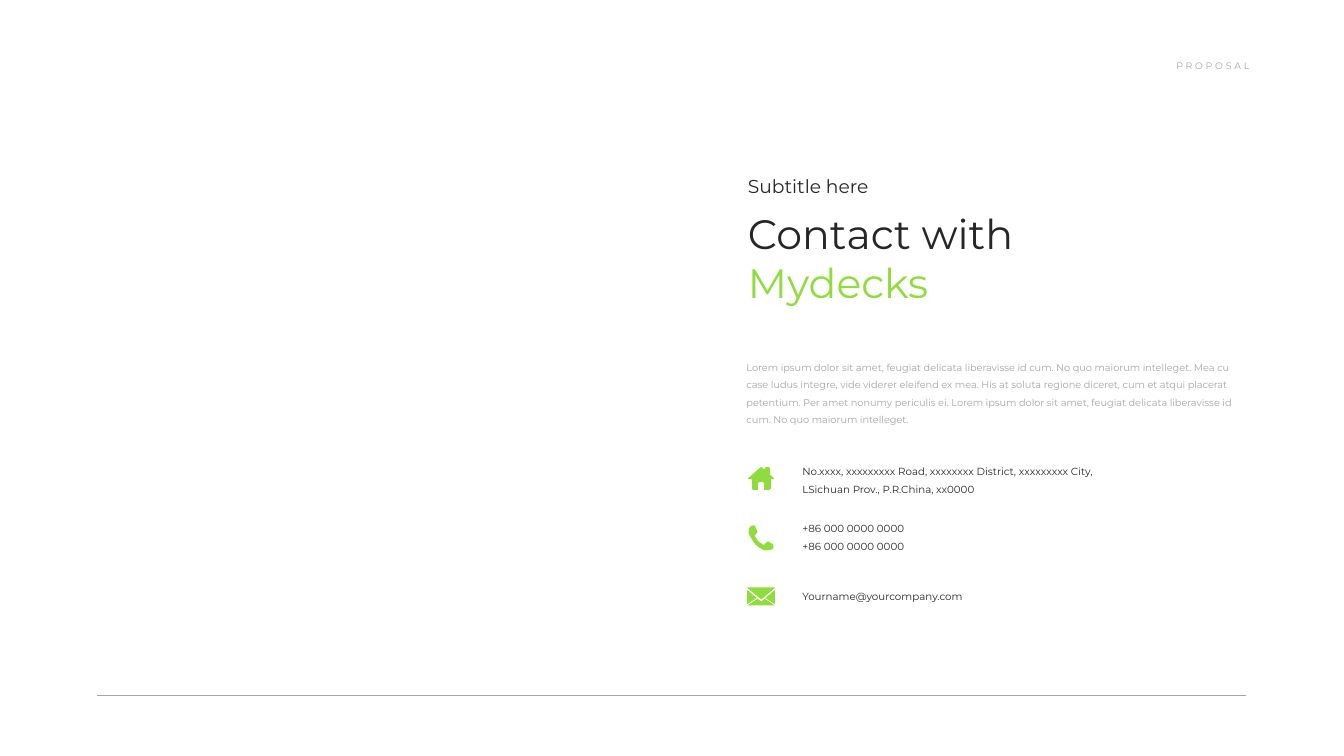
from pptx import Presentation
from pptx.dml.color import RGBColor
from pptx.enum.shapes import MSO_CONNECTOR
from pptx.enum.text import MSO_ANCHOR, MSO_AUTO_SIZE, PP_ALIGN
from pptx.oxml.ns import qn
from pptx.util import Pt
from lxml import etree

STRAIGHT = MSO_CONNECTOR.STRAIGHT
MIDDLE = MSO_ANCHOR.MIDDLE
GROW = MSO_AUTO_SIZE.SHAPE_TO_FIT_TEXT
RIGHT = PP_ALIGN.RIGHT

PX = 9144
WIDTH, HEIGHT = 2000, 1125
COLORS = {"green": "90DC3F", "dark": "262626", "gray": "A6A6A6"}

CONTACT_FRAME = {
    "vertical_anchor": MIDDLE,
    "margin_left": 0,
    "margin_right": 0,
    "margin_top": 15 * PX,
    "margin_bottom": 15 * PX,
}
ONE_AND_HALF = {"line_spacing": 1.5}
SPACED = {"space_before": Pt(12)}

HOUSE = [
    (1140, 695), (1144, 695), (1146, 697), (1146, 706), (1152, 712), (1151, 713),
    (1147, 713), (1147, 727), (1145, 729), (1137, 729), (1137, 719), (1135, 717),
    (1130, 717), (1128, 719), (1128, 729), (1120, 729), (1119, 727), (1119, 713),
    (1114, 713), (1113, 712), (1131, 696), (1133, 695), (1138, 699), (1138, 697),
]
PHONE = [
    (1120, 782), (1123, 782), (1124, 784), (1125, 786), (1127, 791), (1127, 792),
    (1125, 795), (1123, 797), (1124, 799), (1129, 806), (1135, 810), (1137, 811),
    (1140, 808), (1142, 806), (1144, 806), (1147, 808), (1150, 810), (1151, 811),
    (1151, 815), (1150, 817), (1147, 818), (1142, 819), (1139, 819), (1135, 818),
    (1130, 815), (1125, 811), (1121, 806), (1118, 801), (1115, 796), (1114, 791),
    (1115, 786), (1117, 783),
]
ENVELOPE = [
    [(1112, 874), (1153, 874), (1153, 875), (1133, 892), (1112, 875)],
    [(1112, 878), (1126, 890), (1112, 899)],
    [(1153, 878), (1153, 899), (1139, 890)],
    [(1127, 891), (1133, 895), (1138, 891), (1153, 901), (1112, 901)],
]

LOREM = (
    "Lorem ipsum dolor sit amet, feugiat delicata liberavisse id cum. "
    "No quo maiorum intelleget. Mea cu case ludus integre, vide viderer eleifend ex mea. "
    "His at soluta regione diceret, cum et atqui placerat petentium. "
    "Per amet nonumy periculis ei. Lorem ipsum dolor sit amet, feugiat delicata "
    "liberavisse id cum. No quo maiorum intelleget."
)
ADDRESS = (
    "No.xxxx, xxxxxxxxx Road, xxxxxxxx District, xxxxxxxxx City, "
    "LSichuan Prov., P.R.China, xx0000"
)
PHONE_NUMBER = "+86 000 0000 0000"
CONTACTS = [
    (669, 82, [(ADDRESS, ONE_AND_HALF)]),
    (764, 72, [(PHONE_NUMBER, {}), (PHONE_NUMBER, ONE_AND_HALF)]),
    (864, 48, [("Yourname@yourcompany.com", {})]),
]


def apply(target, values):
    for name, value in values.items():
        setattr(target, name, value)


class SlideBuilder:
    font = "Montserrat"

    def __init__(self, slide):
        self.slide = slide

    def color(self, name):
        return RGBColor.from_string(COLORS[name])

    def text(self, left, top, width, height, paragraphs, frame_format=None):
        box = self.slide.shapes.add_textbox(*(v * PX for v in (left, top, width, height)))
        frame = box.text_frame
        apply(frame, {"word_wrap": True, "auto_size": GROW, **(frame_format or {})})
        for index, (runs, paragraph_format) in enumerate(paragraphs):
            paragraph = frame.add_paragraph() if index else frame.paragraphs[0]
            apply(paragraph, paragraph_format)
            for words, size, color, tracking in runs:
                run = paragraph.add_run()
                run.text = words
                apply(run.font, {"name": self.font, "size": Pt(size)})
                run.font.color.rgb = self.color(color)
                if tracking:
                    run._r.get_or_add_rPr().set("spc", str(tracking * 100))

    def line(self, x1, y1, x2, y2, color, weight):
        rule = self.slide.shapes.add_connector(STRAIGHT, *(v * PX for v in (x1, y1, x2, y2)))
        rule.line.color.rgb = self.color(color)
        rule.line.width = Pt(weight)
        etree.SubElement(rule._element.spPr, qn("a:effectLst"))

    def outline(self, points, color, shapes=None):
        builder = (shapes or self.slide.shapes).build_freeform(*points[0], scale=PX)
        builder.add_line_segments(points[1:], close=True)
        icon = builder.convert_to_shape()
        icon.shadow.inherit = False
        icon.fill.solid()
        icon.fill.fore_color.rgb = self.color(color)
        icon.line.fill.background()

    def group(self, outlines, color):
        shapes = self.slide.shapes.add_group_shape().shapes
        for points in outlines:
            self.outline(points, color, shapes)


def main():
    deck = Presentation()
    apply(deck, {"slide_width": WIDTH * PX, "slide_height": HEIGHT * PX})
    page = SlideBuilder(deck.slides.add_slide(deck.slide_layouts[6]))

    page.text(1633, 84, 236, 27, [([("PROPOSAL", 10, "gray", 3)], {"alignment": RIGHT})])
    page.line(145, 1035, 1854, 1035, "gray", 1.5)
    page.text(1103, 255, 496, 209, [
        ([("Subtitle here", 20, "dark", 0)], {}),
        ([("Contact with ", 44, "dark", 0), ("Mydecks", 44, "green", 0)], SPACED),
    ])
    page.text(1101, 524, 752, 113, [
        ([(LOREM, 10.5, "gray", 0)], {**ONE_AND_HALF, **SPACED}),
    ])

    page.outline(HOUSE, "green")
    page.outline(PHONE, "green")
    page.group(ENVELOPE, "green")
    for top, height, entries in CONTACTS:
        paragraphs = [([(words, 11, "dark", 0)], spacing) for words, spacing in entries]
        page.text(1194, top, 442, height, paragraphs, CONTACT_FRAME)

    deck.save("out.pptx")


if __name__ == "__main__":
    main()
